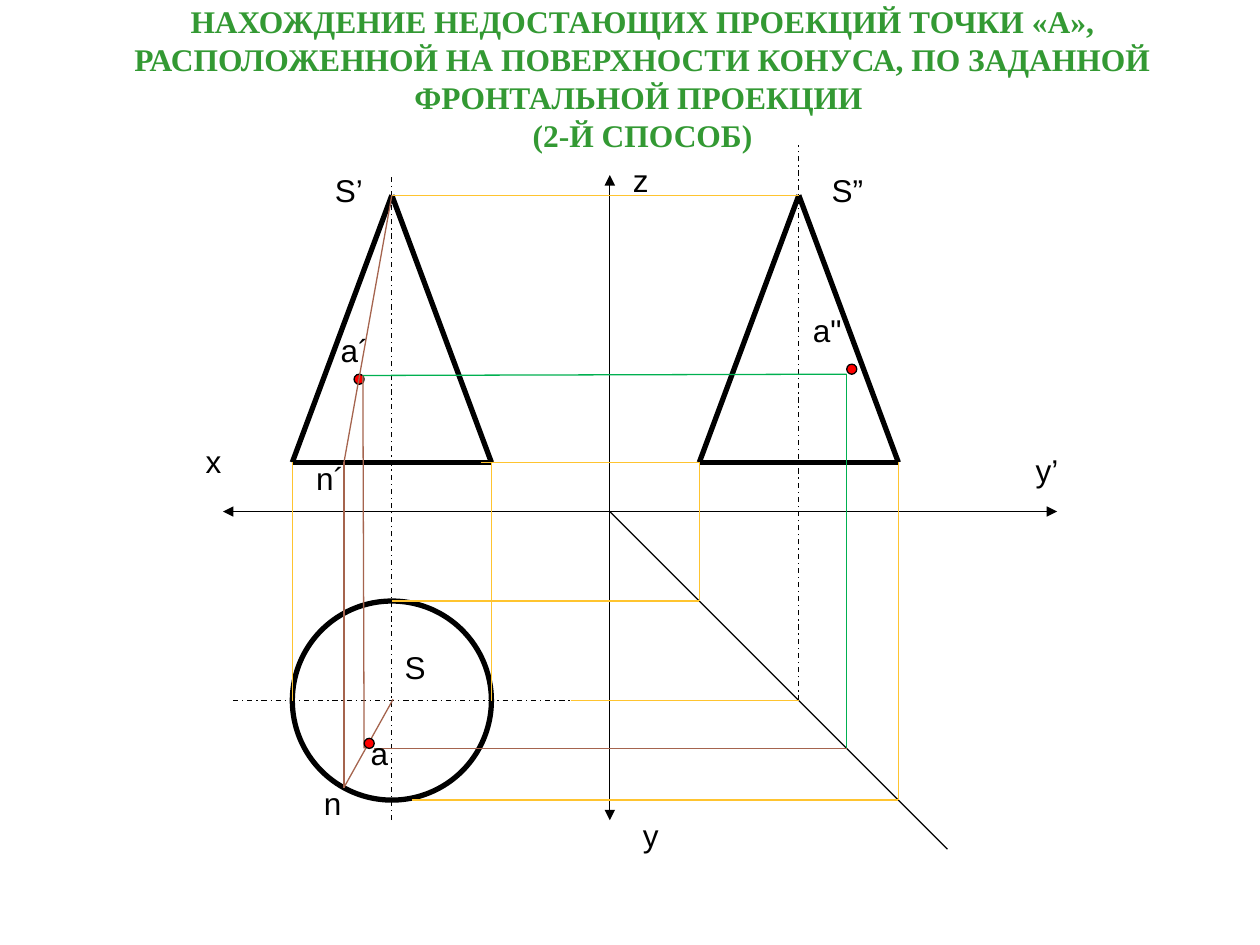
from lxml import etree
from pptx import Presentation
from pptx.dml.color import RGBColor
from pptx.enum import dml, shapes, text
from pptx.oxml.ns import qn
from pptx.util import Inches, Pt

COLORS = {
    "black": "000000",
    "title": "339933",
    "link": "FFC42F",
    "generator": "A5644E",
    "transfer": "00B050",
    "point": "FF0000",
}
THIN, THICK = 0.75, 3


def rgb(name):
    return RGBColor.from_string(COLORS[name])


class ProjectionDrawing:
    """Holds the style and the slide being drawn; lengths are in inches."""

    def __init__(self, presentation):
        self.slide = presentation.slides.add_slide(presentation.slide_layouts[5])

    def title(self, wording, left, top, width, height):
        shape = self.slide.shapes.title
        shape.left, shape.top = Inches(left), Inches(top)
        shape.width, shape.height = Inches(width), Inches(height)
        frame = shape.text_frame
        frame.text = wording
        frame.word_wrap = True
        frame.auto_size = text.MSO_AUTO_SIZE.NONE
        frame.vertical_anchor = text.MSO_ANCHOR.MIDDLE
        self.format(frame.paragraphs[0], "Times New Roman", "title", bold=True)

    def format(self, paragraph, font_name, color, bold=False):
        paragraph.alignment = text.PP_ALIGN.CENTER
        font = paragraph.font
        font.name, font.size, font.bold = font_name, Pt(18), bold
        font.color.rgb = rgb(color)

    def label(self, wording, left, top, width, wrap=False):
        shape = self.slide.shapes.add_textbox(
            Inches(left), Inches(top), Inches(width), Inches(0.4))
        frame = shape.text_frame
        frame.text = wording
        frame.word_wrap = wrap
        frame.auto_size = text.MSO_AUTO_SIZE.SHAPE_TO_FIT_TEXT
        self.format(frame.paragraphs[0], "Arial", "black")

    def line(self, start, end, color="black", width=THIN, dashed=False, arrows=False):
        connector = self.slide.shapes.add_connector(
            shapes.MSO_CONNECTOR.STRAIGHT, *map(Inches, start + end))
        connector.line.color.rgb = rgb(color)
        connector.line.width = Pt(width)
        if dashed:
            connector.line.dash_style = dml.MSO_LINE.DASH_DOT
        properties = connector._element.spPr
        if arrows:
            outline = properties.find(qn("a:ln"))
            for tag in ("a:headEnd", "a:tailEnd"):
                etree.SubElement(outline, qn(tag), type="triangle")
        etree.SubElement(properties, qn("a:effectLst"))

    def round(self, kind, left, top, size, width, fill=None):
        shape = self.slide.shapes.add_shape(
            kind, Inches(left), Inches(top), Inches(size), Inches(size))
        shape.shadow.inherit = False
        shape.line.color.rgb = rgb("black")
        shape.line.width = Pt(width)
        if fill:
            shape.fill.solid()
            shape.fill.fore_color.rgb = rgb(fill)
        else:
            shape.fill.background()

    def point(self, left, top):
        self.round(shapes.MSO_SHAPE.FLOWCHART_CONNECTOR, left, top, 0.08, THIN, "point")

    def cone(self, center):
        """Triangle that the cone shows in a vertical projection."""
        corners = [(center - RADIUS, BASE_Y), (center + RADIUS, BASE_Y), (center, APEX_Y)]
        for start, end in zip(corners, corners[1:] + corners[:1]):
            self.line(start, end, width=THICK)


RADIUS = 0.79
APEX_Y, BASE_Y = 1.55, 3.67
FRONT_X, SIDE_X = 3.11, 6.34
PLAN_Y = 5.56
ORIGIN_X, ORIGIN_Y = 4.84, 4.06


def main():
    presentation = Presentation()
    presentation.slide_width, presentation.slide_height = Inches(10), Inches(7.5)
    drawing = ProjectionDrawing(presentation)
    drawing.title(
        "НАХОЖДЕНИЕ НЕДОСТАЮЩИХ ПРОЕКЦИЙ ТОЧКИ «А», РАСПОЛОЖЕННОЙ НА "
        "ПОВЕРХНОСТИ КОНУСА, ПО ЗАДАННОЙ ФРОНТАЛЬНОЙ ПРОЕКЦИИ \v(2-Й СПОСОБ)",
        0.2, 0.21, 9.8, 0.82)

    # Coordinate axes and the 45° transfer line
    drawing.line((1.77, ORIGIN_Y), (8.39, ORIGIN_Y), arrows=True)
    drawing.line((ORIGIN_X, 1.39), (ORIGIN_X, 6.51), arrows=True)
    drawing.line((ORIGIN_X, ORIGIN_Y), (ORIGIN_X + 2.68, ORIGIN_Y + 2.68))

    # Centre lines
    drawing.line((1.85, PLAN_Y), (4.61, PLAN_Y), dashed=True)
    drawing.line((FRONT_X, 6.51), (FRONT_X, 1.39), dashed=True)
    drawing.line((SIDE_X, PLAN_Y), (SIDE_X, 1.15), dashed=True)

    # Three projections of the cone
    drawing.round(shapes.MSO_SHAPE.OVAL, FRONT_X - RADIUS, PLAN_Y - RADIUS,
                  2 * RADIUS, THICK)
    for center in (FRONT_X, SIDE_X):
        drawing.cone(center)

    # Links between the projections
    for side in (-RADIUS, RADIUS):
        drawing.line((FRONT_X + side, PLAN_Y), (FRONT_X + side, BASE_Y), "link")
        drawing.line((SIDE_X + side, PLAN_Y + side), (SIDE_X + side, BASE_Y), "link")
    for left, right, y in (
        (FRONT_X, SIDE_X, APEX_Y),
        (3.82, SIDE_X - RADIUS, BASE_Y),
        (FRONT_X, SIDE_X - RADIUS, PLAN_Y - RADIUS),
        (4.53, SIDE_X, PLAN_Y),
        (3.27, SIDE_X + RADIUS, PLAN_Y + RADIUS),
    ):
        drawing.line((left, y), (right, y), "link")

    # Point A and its generator SN; the front point lies under the lines
    drawing.point(2.81, 2.97)
    for start, end, color in (
        ((FRONT_X, APEX_Y), (2.73, BASE_Y), "generator"),
        ((2.73, BASE_Y), (2.73, 6.25), "generator"),
        ((3.12, 5.55), (2.73, 6.25), "generator"),
        ((2.88, 2.98), (2.89, 5.94), "generator"),
        ((2.97, 5.94), (6.72, 5.94), "generator"),
        ((2.88, 2.98), (6.72, 2.97), "transfer"),
        ((6.72, 5.94), (6.72, 2.97), "transfer"),
    ):
        drawing.line(start, end, color)
    drawing.point(2.89, 5.86)
    drawing.point(6.72, 2.89)

    for axis_or_apex in (
        ("х", 1.53, 3.46, 0.33),
        ("у", 5, 6.43, 0.33),
        ("у’", 8.12, 3.53, 0.38),
        ("z", 4.92, 1.23, 0.33),
        ("S’", 2.56, 1.31, 0.42),
        ("S", 3.11, 5.09, 0.37),
        ("S”", 6.5, 1.31, 0.45),
    ):
        drawing.label(*axis_or_apex)
    for point_name in (
        ("а´", 2.19, 2.58, 1.25),
        ("n´", 2.19, 3.59, 0.86),
        ("n", 2.42, 6.17, 0.44),
        ("а", 2.5, 5.78, 1.02),
        ('а"', 6.02, 2.42, 1.09),
    ):
        drawing.label(*point_name, wrap=True)

    presentation.save("out.pptx")


if __name__ == "__main__":
    main()
